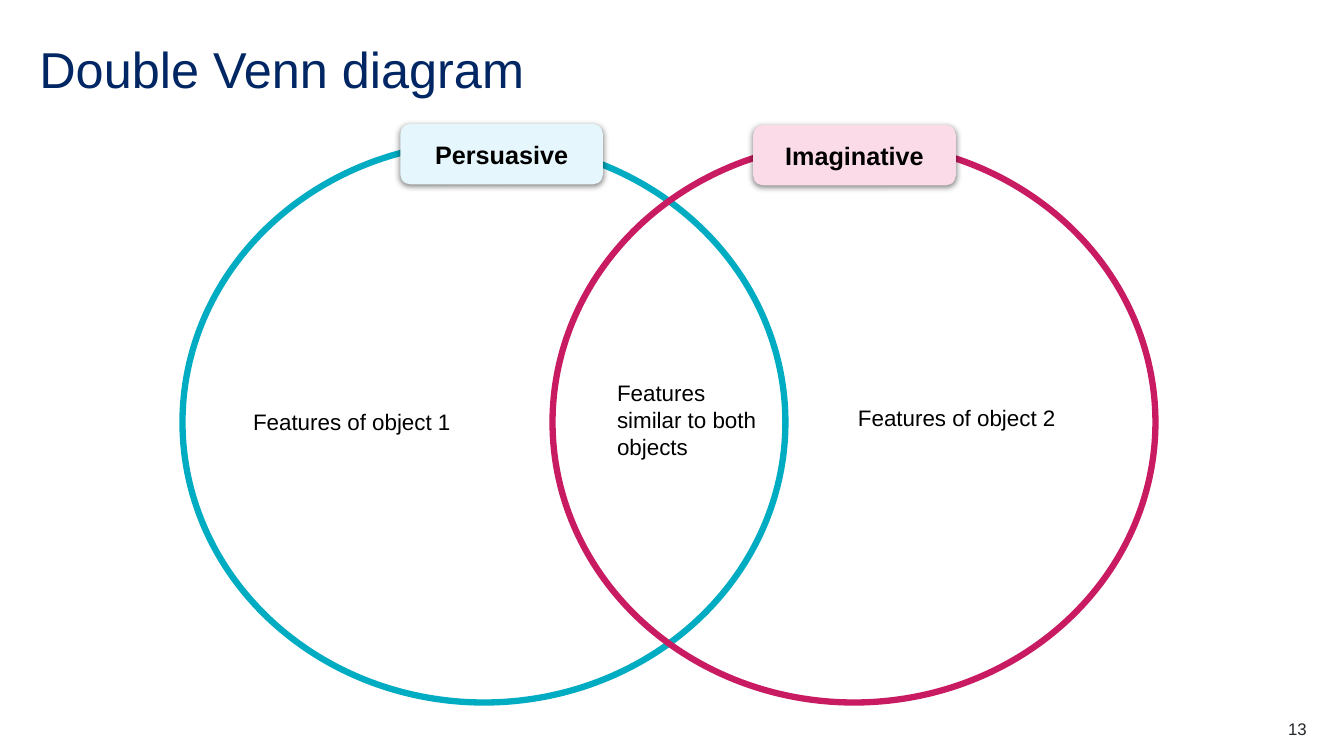
from dataclasses import dataclass

from lxml import etree
from pptx import Presentation
from pptx.dml.color import RGBColor
from pptx.enum.shapes import MSO_SHAPE
from pptx.enum.text import MSO_ANCHOR, MSO_AUTO_SIZE, PP_ALIGN
from pptx.oxml.ns import qn
from pptx.shapes.autoshape import Shape
from pptx.slide import Slide
from pptx.util import Inches, Pt

COLORS = {
    "navy": "002664",
    "teal": "00ACC2",
    "pale_teal": "E5F7FC",
    "crimson": "C81B62",
    "pale_pink": "FBDBE7",
    "black": "000000",
    "charcoal": "22272B",
}
CIRCLE_TOP, CIRCLE_WIDTH, CIRCLE_HEIGHT = 1.41, 5.98, 5.56
TAG_WIDTH, TAG_HEIGHT = 2.01, 0.6


@dataclass
class VennSet:
    name: str
    circle_left: float
    tag_left: float
    tag_top: float
    outline: str
    tag_fill: str


@dataclass
class Label:
    text: str
    left: float
    top: float
    width: float
    height: float
    size: int = 16
    color: str = "black"
    inset: float = 0.13
    align: PP_ALIGN = PP_ALIGN.LEFT


VENN_SETS = [
    VennSet("Persuasive", 1.81, 3.97, 1.23, "teal", "pale_teal"),
    VennSet("Imaginative", 5.48, 7.47, 1.24, "crimson", "pale_pink"),
]
LABELS = [
    Label("Features of object 1", 2.38, 3.92, 3.11, 0.53),
    Label("Features of object 2", 8.38, 3.88, 2.5, 0.53),
    Label("Features similar to both objects", 5.99, 3.63, 1.65, 1.12),
    Label("13", 12.17, 7.13, 0.79, 0.2, 12, "charcoal", 0, PP_ALIGN.RIGHT),
]


def rgb(name: str) -> RGBColor:
    return RGBColor.from_string(COLORS[name])


def apply_format(target: object, values: dict) -> None:
    for attribute, value in values.items():
        setattr(target, attribute, value)


def write_text(shape: Shape, text: str, size: int, color: str, align: PP_ALIGN,
               anchor: MSO_ANCHOR, inset_x: float, inset_y: float,
               bold: bool = False) -> None:
    frame = shape.text_frame
    frame.text = text
    apply_format(frame, {
        "word_wrap": True,
        "auto_size": MSO_AUTO_SIZE.NONE,
        "vertical_anchor": anchor,
        "margin_left": Inches(inset_x),
        "margin_right": Inches(inset_x),
        "margin_top": Inches(inset_y),
        "margin_bottom": Inches(inset_y),
    })
    paragraph = frame.paragraphs[0]
    paragraph.alignment = align
    font = paragraph.runs[0].font
    apply_format(font, {"name": "Arial", "size": Pt(size), "bold": bold})
    font.color.rgb = rgb(color)


def add_soft_shadow(shape: Shape) -> None:
    shape.shadow.inherit = False
    effects = shape.element.spPr.find(qn("a:effectLst"))
    shadow = etree.SubElement(effects, qn("a:outerShdw"), {
        "blurRad": str(Pt(4.5)), "dist": str(Pt(1.5)),
        "dir": str(90 * 60000), "rotWithShape": "0"})
    tint = etree.SubElement(shadow, qn("a:srgbClr"), val=COLORS["black"])
    etree.SubElement(tint, qn("a:alpha"), val="50000")


def add_title(slide: Slide) -> None:
    title = slide.shapes.title
    apply_format(title, {"left": Inches(0.39), "top": Inches(0.39),
                         "width": Inches(12.56), "height": Inches(0.6)})
    write_text(title, "Double Venn diagram", 36, "navy",
               PP_ALIGN.LEFT, MSO_ANCHOR.BOTTOM, 0, 0)
    title.text_frame.paragraphs[0].line_spacing = 0.9


def add_venn_set(slide: Slide, venn: VennSet) -> None:
    group = slide.shapes.add_group_shape()
    circle = group.shapes.add_shape(
        MSO_SHAPE.OVAL, Inches(venn.circle_left), Inches(CIRCLE_TOP),
        Inches(CIRCLE_WIDTH), Inches(CIRCLE_HEIGHT))
    circle.shadow.inherit = False
    circle.fill.background()
    circle.line.color.rgb = rgb(venn.outline)
    circle.line.width = Pt(4.5)

    tag = group.shapes.add_shape(
        MSO_SHAPE.ROUNDED_RECTANGLE, Inches(venn.tag_left),
        Inches(venn.tag_top), Inches(TAG_WIDTH), Inches(TAG_HEIGHT))
    tag.fill.solid()
    tag.fill.fore_color.rgb = rgb(venn.tag_fill)
    tag.line.fill.background()
    add_soft_shadow(tag)
    write_text(tag, venn.name, 18, "black", PP_ALIGN.CENTER,
               MSO_ANCHOR.MIDDLE, 0.09, 0.04, bold=True)


def add_label(slide: Slide, label: Label) -> None:
    box = slide.shapes.add_textbox(Inches(label.left), Inches(label.top),
                                   Inches(label.width), Inches(label.height))
    write_text(box, label.text, label.size, label.color, label.align,
               MSO_ANCHOR.TOP, label.inset, label.inset)


def main() -> None:
    presentation = Presentation()
    presentation.slide_width = Inches(13.33)
    presentation.slide_height = Inches(7.5)
    # Layout 5 is "Title Only"
    slide = presentation.slides.add_slide(presentation.slide_layouts[5])

    add_title(slide)
    # Overlapping circles with their name tags
    for venn in VENN_SETS:
        add_venn_set(slide, venn)
    # Feature texts and page number
    for label in LABELS:
        add_label(slide, label)

    presentation.save("out.pptx")


if __name__ == "__main__":
    main()
